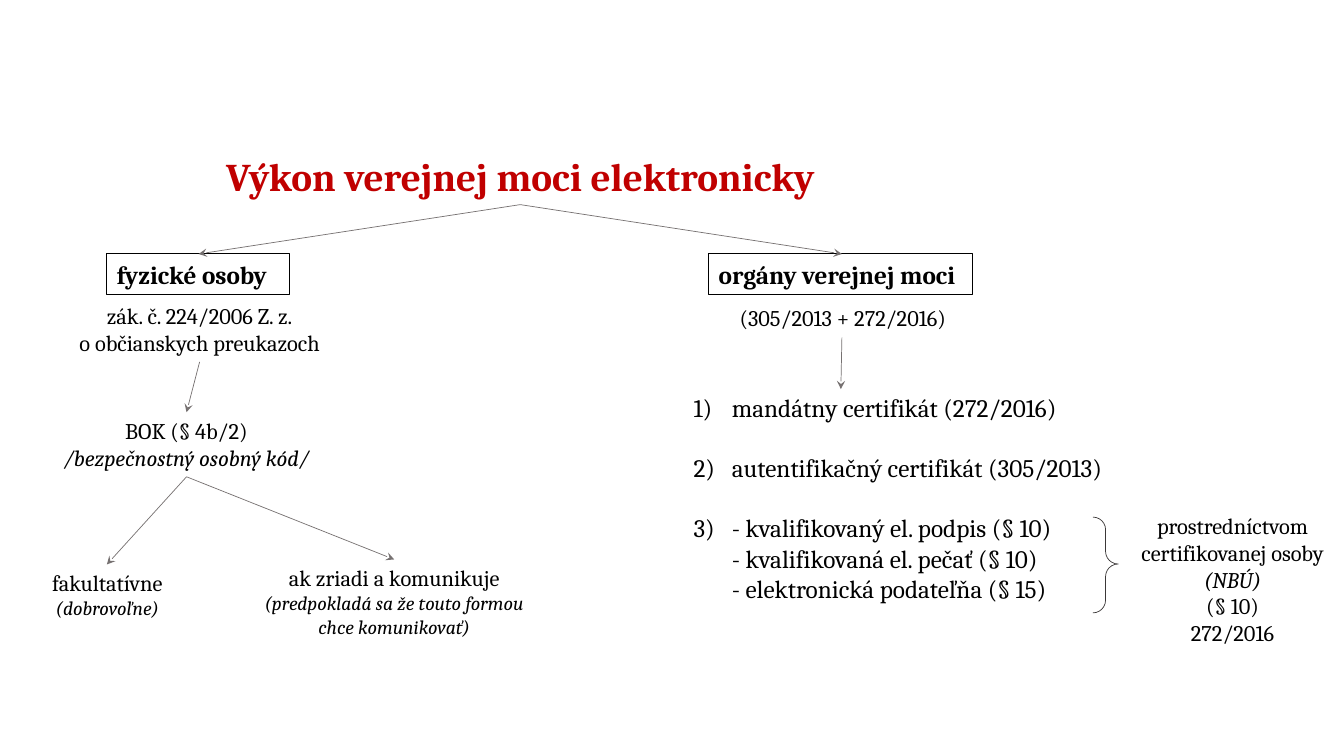
from lxml import etree
from pptx import Presentation
from pptx.dml.color import RGBColor
from pptx.enum.shapes import MSO_CONNECTOR as CONN, MSO_SHAPE as SHAPE
from pptx.enum.text import MSO_ANCHOR as ANCHOR, PP_ALIGN as ALIGN
from pptx.oxml.ns import qn
from pptx.util import Inches, Pt

RED = RGBColor(0xC0, 0x00, 0x00)
BLACK = RGBColor(0x00, 0x00, 0x00)
GRAY = RGBColor(0x76, 0x71, 0x71)
DARK = RGBColor(0x3B, 0x38, 0x38)


def style(p, size, color=BLACK, bold=False, italic=False):
    for r in p.runs:
        r.font.name = "Cambria"
        r.font.size = Pt(size)
        r.font.color.rgb = color
        r.font.bold = bold
        r.font.italic = italic


def add_box(x, y, w, h):
    sp = s.shapes.add_textbox(Inches(x), Inches(y), Inches(w), Inches(h))
    sp.text_frame.word_wrap = True
    return sp.text_frame


prs = Presentation()
prs.slide_width, prs.slide_height = Inches(13.33), Inches(7.5)
s = prs.slides.add_slide(prs.slide_layouts[6])

# Title
p = add_box(1.97, 1.46, 6.38, 0.57).paragraphs[0]
p.text = "Výkon verejnej moci elektronicky"
p.alignment = ALIGN.CENTER
style(p, 28, RED, bold=True)

# Framed branch headings
for text, x, w in [("fyzické osoby", 1.06, 1.81),
                   ("orgány verejnej moci", 7.03, 2.62)]:
    sp = s.shapes.add_shape(SHAPE.RECTANGLE, Inches(x), Inches(2.52),
                            Inches(w), Inches(0.4))
    sp.shadow.inherit = False
    sp.fill.background()
    sp.line.color.rgb = BLACK
    sp.line.width = Pt(0.75)
    tf = sp.text_frame
    tf.word_wrap = True
    tf.vertical_anchor = ANCHOR.TOP
    p = tf.paragraphs[0]
    p.text = text
    p.alignment = ALIGN.LEFT
    style(p, 18, bold=True)

# Centred labels: position, then (text, size, italic) per paragraph
labels = [
    ((0.62, 2.95, 2.72, 0.64), [("zák. č. 224/2006 Z. z.", 16, False),
                                ("o občianskych preukazoch", 16, False)]),
    ((7.08, 2.97, 2.56, 0.37), [("(305/2013 + 272/2016)", 16, False)]),
    ((0.47, 4.09, 2.76, 0.64), [("BOK (§ 4b/2)", 16, False),
                                ("/bezpečnostný osobný kód/", 16, True)]),
    ((2.47, 5.55, 2.88, 0.84), [("ak zriadi a komunikuje", 16, False),
                                ("(predpokladá sa že touto formou", 14, True),
                                ("chce komunikovať)", 14, True)]),
    ((0.39, 5.6, 1.35, 0.61), [("fakultatívne", 16, False),
                               ("(dobrovoľne)", 14, True)]),
    ((11.08, 5.03, 2.29, 1.45), [("prostredníctvom certifikovanej osoby", 16, False),
                                 ("(NBÚ)", 16, True),
                                 ("(§ 10)", 16, False),
                                 ("272/2016", 16, False)]),
]
for place, lines in labels:
    tf = add_box(*place)
    for i, (text, size, italic) in enumerate(lines):
        p = tf.paragraphs[0] if i == 0 else tf.add_paragraph()
        p.text = text
        p.alignment = ALIGN.CENTER
        style(p, size, italic=italic)

# Numbered list
items = [
    "mandátny certifikát (272/2016)",
    "autentifikačný certifikát (305/2013)",
    "- kvalifikovaný el. podpis (§ 10)\n"
    "- kvalifikovaná el. pečať (§ 10)\n"
    "- elektronická podateľňa (§ 15)",
]
tf = add_box(6.78, 3.84, 5.15, 2.52)
for i, text in enumerate(items):
    p = tf.paragraphs[0] if i == 0 else tf.add_paragraph()
    p.text = text
    pPr = p._p.get_or_add_pPr()
    pPr.set("marL", str(Inches(0.38)))
    pPr.set("indent", str(-Inches(0.38)))
    etree.SubElement(pPr, qn("a:buFont"), typeface="+mj-lt")
    etree.SubElement(pPr, qn("a:buAutoNum"), type="arabicParenR")
    if i > 0:
        p.space_before = Pt(21.5)
    style(p, 18)

# Arrows
arrows = [
    (5.16, 2.03, 1.97, 2.52),
    (5.16, 2.03, 8.35, 2.52),
    (1.98, 3.59, 1.85, 4.09),
    (1.85, 4.73, 1.06, 5.6),
    (1.85, 4.73, 3.91, 5.55),
    (8.35, 3.35, 8.34, 3.86),
]
for ends in arrows:
    line = s.shapes.add_connector(CONN.STRAIGHT, *[Inches(v) for v in ends])
    line.line.color.rgb = GRAY
    line.line.width = Pt(0.5)
    etree.SubElement(line.line._get_or_add_ln(), qn("a:tailEnd"), type="stealth")
    etree.SubElement(line._element.spPr, qn("a:effectLst"))

# Brace beside the third item
brace = s.shapes.add_shape(SHAPE.RIGHT_BRACE, Inches(10.84), Inches(5.13),
                           Inches(0.25), Inches(0.95))
brace.shadow.inherit = False
brace.adjustments[0] = 0.5
brace.adjustments[1] = 0.49
brace.fill.background()
brace.line.color.rgb = DARK
brace.line.width = Pt(0.5)

prs.save("out.pptx")
